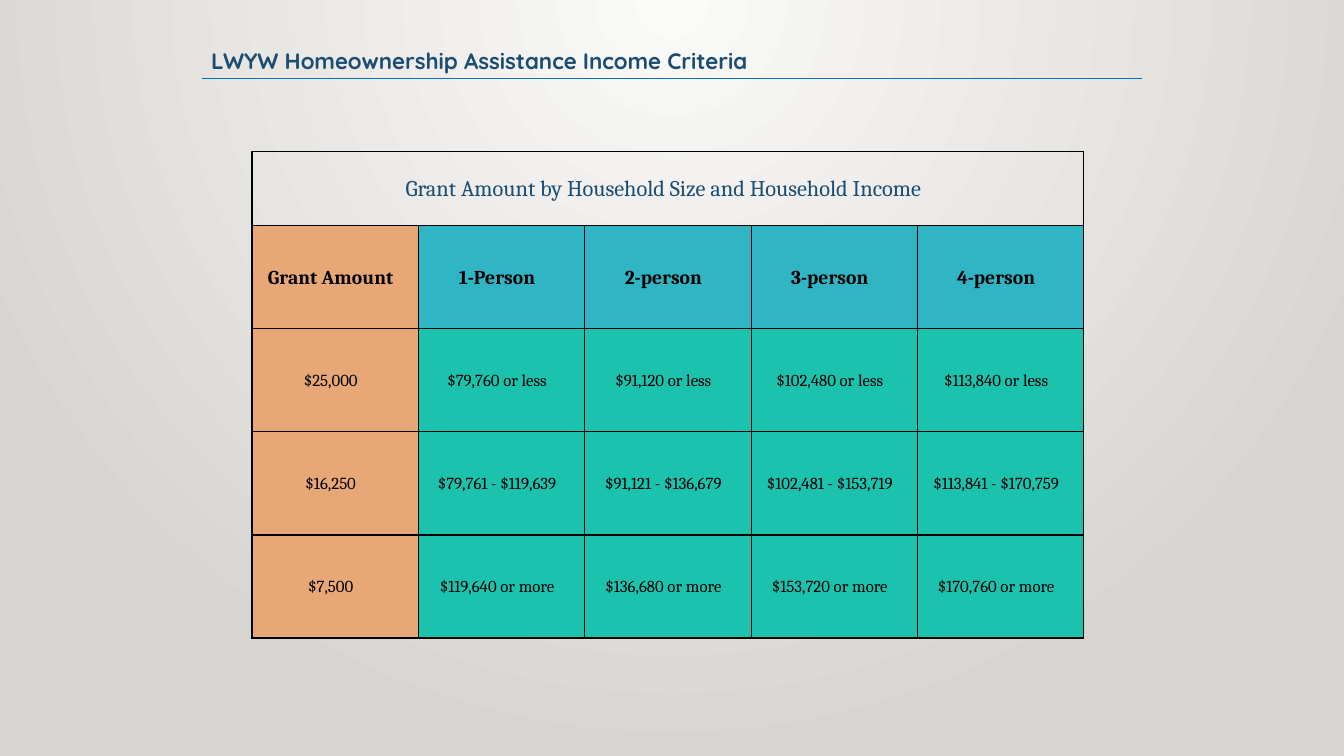
from lxml.etree import SubElement as Sub
from pptx import Presentation
from pptx.dml.color import RGBColor
from pptx.enum.shapes import MSO_CONNECTOR as Conn
from pptx.enum.text import MSO_ANCHOR as Anchor, MSO_AUTO_SIZE as Fit, PP_ALIGN as Align
from pptx.oxml.ns import qn
from pptx.util import Inches, Pt

NAVY, BLUE, BLACK = "1A4D71", "0070C0", "000000"
SAND, TEAL, GREEN = "E8A777", "2FB5C3", "1BC3AF"
PALE, GREY = "FAFAF9", "D7D5D2"

BANNER = "Grant Amount by Household Size and Household Income"
ROWS = [
    ["Grant Amount", "1-Person", "2-person", "3-person", "4-person"],
    ["$25,000", "$79,760 or less", "$91,120 or less",
     "$102,480 or less", "$113,840 or less"],
    ["$16,250", "$79,761 - $119,639", "$91,121 - $136,679",
     "$102,481 - $153,719", "$113,841 - $170,759"],
    ["$7,500", "$119,640 or more", "$136,680 or more",
     "$153,720 or more", "$170,760 or more"],
]


def color(code):
    return RGBColor.from_string(code)


def style(para, face, size, code, bold, space):
    para.alignment = Align.CENTER
    para.line_spacing = space
    for run in para.runs:
        font = run.font
        font.name, font.size, font.bold = face, Pt(size), bold
        font.color.rgb = color(code)


def backdrop(slide):
    # Radial glow from the top centre
    fill = slide.background.fill
    fill.gradient()
    for stop, code in zip(fill.gradient_stops, (PALE, GREY)):
        stop.color.rgb = color(code)
    grad = slide.element.find(".//" + qn("a:gradFill"))
    grad.remove(grad.find(qn("a:lin")))
    glow = Sub(grad, qn("a:path"), path="circle")
    Sub(glow, qn("a:fillToRect"), l="43000", t="0", r="43000", b="100000")


def heading(slide, x, y, w, h):
    # Title
    title = slide.shapes.title
    title.left, title.top = Inches(x), Inches(y)
    title.width, title.height = Inches(w), Inches(h)
    frame = title.text_frame
    frame.text = "LWYW Homeownership Assistance Income Criteria"
    frame.auto_size, frame.word_wrap = Fit.NONE, True
    frame.vertical_anchor = Anchor.BOTTOM
    style(frame.paragraphs[0], "Quicksand", 16, NAVY, True, 0.9)


def rule(slide, x, y, w):
    # Line under the title
    line = slide.shapes.add_connector(
        Conn.STRAIGHT, Inches(x), Inches(y), Inches(x + w), Inches(y))
    line.line.color.rgb = color(BLUE)
    line.line.width = Pt(1)
    Sub(line.element.spPr, qn("a:effectLst"))


def border(cell):
    props = cell._tc.get_or_add_tcPr()
    for i, side in enumerate(("lnL", "lnR", "lnT", "lnB")):
        edge = props.makeelement(qn("a:" + side), {"w": str(Pt(1))})
        Sub(Sub(edge, qn("a:solidFill")), qn("a:srgbClr"), val=BLACK)
        props.insert(i, edge)


def paint(cell, code):
    if code:
        cell.fill.solid()
        cell.fill.fore_color.rgb = color(code)
    else:
        cell.fill.background()
    border(cell)


def write(cell, text, size, code, bold):
    cell.text_frame.text = text
    cell.vertical_anchor = Anchor.MIDDLE
    cell.margin_left = cell.margin_top = cell.margin_bottom = Inches(0.08)
    cell.margin_right = Inches(0.17)
    style(cell.text_frame.paragraphs[0], "Cambria", size, code, bold, 1.07)


def grants(slide, x, y, w, h):
    # Grant table: banner row, header row, then amounts
    count, wide, top = len(ROWS), len(ROWS[0]), 0.74
    table = slide.shapes.add_table(
        count + 1, wide, Inches(x), Inches(y), Inches(w), Inches(h)).table
    table.first_row = table.horz_banding = False
    for col in table.columns:
        col.width = Inches(w / wide)
    for row in table.rows:
        row.height = Inches((h - top) / count)
    table.rows[0].height = Inches(top)

    for c in range(wide):
        paint(table.cell(0, c), None)
    table.cell(0, 0).merge(table.cell(0, wide - 1))
    write(table.cell(0, 0), BANNER, 16, NAVY, False)

    for r, row in enumerate(ROWS, 1):
        head = r == 1
        for c, text in enumerate(row):
            cell = table.cell(r, c)
            paint(cell, SAND if c == 0 else TEAL if head else GREEN)
            write(cell, text, 14 if head else 12, BLACK, head)


def main():
    deck = Presentation()
    deck.slide_width, deck.slide_height = Inches(13.33), Inches(7.5)
    slide = deck.slides.add_slide(deck.slide_layouts[5])
    backdrop(slide)
    heading(slide, 1.92, 0.17, 5.67, 0.62)
    grants(slide, 2.5, 1.5, 8.25, 4.83)
    rule(slide, 2, 0.78, 9.33)
    deck.save("out.pptx")


if __name__ == "__main__":
    main()
